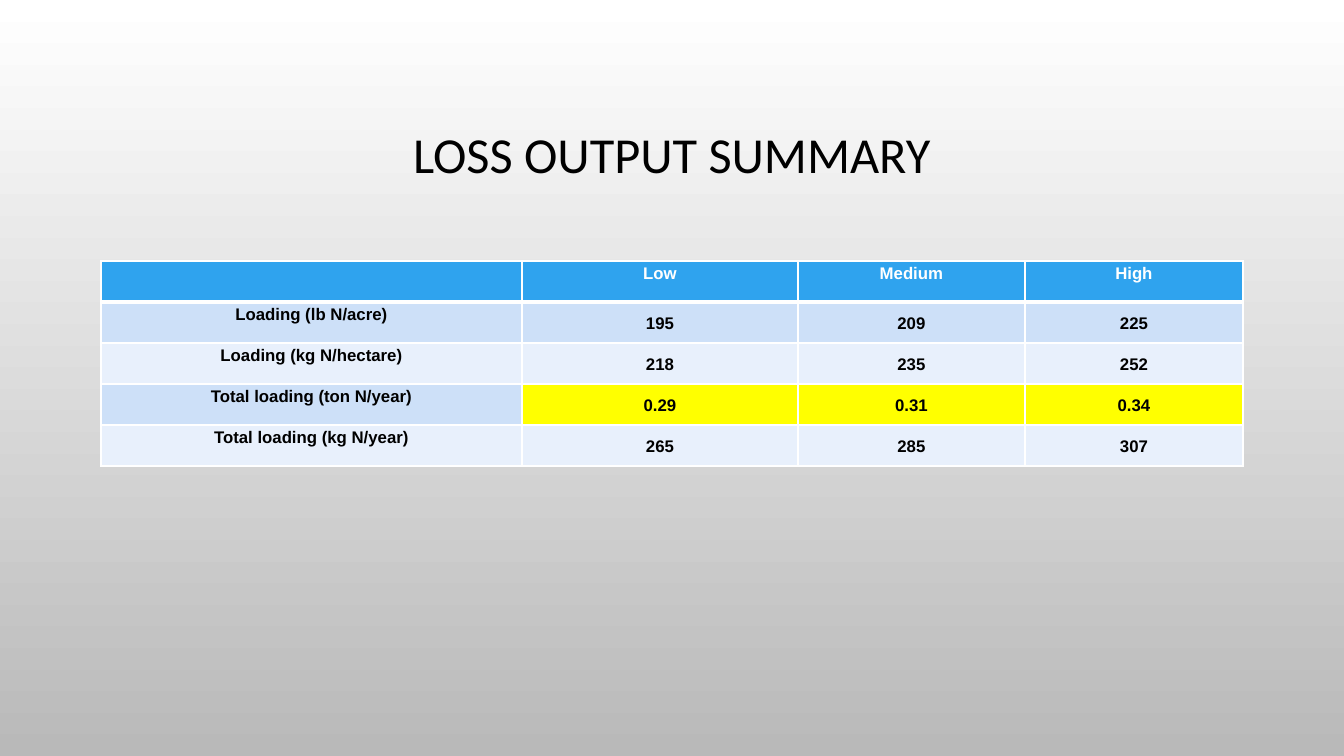
"""Build the loss output summary slide with its nitrogen loading table."""
from lxml import etree
from pptx import Presentation, util as u
from pptx.dml.color import RGBColor
from pptx.enum import text
from pptx.oxml import ns

PX = 914400 / 100.8
WHITE, BLACK, HEADER_BLUE, YELLOW = "FFFFFF", "000000", "2FA3EE", "FFFF00"
BANDS = ["E8F0FC", "CDE0F8"]


def px(length):
    return u.Emu(round(length * PX))


def style(paragraph, color, line_spacing, formats):
    paragraph.alignment = text.PP_ALIGN.CENTER
    paragraph.line_spacing = line_spacing
    for name, value in formats.items():
        setattr(paragraph.font, name, value)
    paragraph.font.color.rgb = RGBColor.from_string(color)


presentation = Presentation()
presentation.slide_width, presentation.slide_height = px(1344), px(756)
slide = presentation.slides.add_slide(presentation.slide_layouts[6])

background = slide.background.fill
background.gradient()
background.gradient_angle = 270
for stop, color in zip(background.gradient_stops, [WHITE, "B9B9B9"]):
    stop.color.rgb = RGBColor.from_string(color)

title = slide.shapes.add_textbox(px(101), px(69), px(1142), px(176))
title.text_frame.word_wrap = True
title.text_frame.vertical_anchor = text.MSO_ANCHOR.MIDDLE
title_paragraph = title.text_frame.paragraphs[0]
title_paragraph.text = "LOSS OUTPUT SUMMARY"
style(title_paragraph, BLACK, 0.9, {"name": "Calibri", "size": u.Pt(36)})

rows = [
    ["", "Low", "Medium", "High"],
    ["Loading (lb N/acre)", "195", "209", "225"],
    ["Loading (kg N/hectare)", "218", "235", "252"],
    ["Total loading (ton N/year)", "0.29", "0.31", "0.34"],
    ["Total loading (kg N/year)", "265", "285", "307"],
]
highlighted_row = 3
column_widths = [421, 276, 227, 218]
row_height = 41
cell_font = {"name": "Arial", "size": u.Pt(12), "bold": True}
cell_margins = {"margin_left": px(9), "margin_right": px(9), "margin_top": 0, "margin_bottom": 0}

table = slide.shapes.add_table(
    len(rows), len(column_widths), px(101), px(261),
    px(sum(column_widths)), px(row_height * len(rows))).table
for column, width in zip(table.columns, column_widths):
    column.width = px(width)

for row_index, values in enumerate(rows):
    table.rows[row_index].height = px(row_height)
    is_header = row_index == 0
    for column_index, value in enumerate(values):
        cell = table.cell(row_index, column_index)
        for name, margin in cell_margins.items():
            setattr(cell, name, margin)
        is_number = column_index > 0 and not is_header
        cell.vertical_anchor = text.MSO_ANCHOR.MIDDLE if is_number else text.MSO_ANCHOR.TOP
        paragraph = cell.text_frame.paragraphs[0]
        paragraph.text = value
        style(paragraph, WHITE if is_header else BLACK, 1.15, cell_font)

        border_widths = {
            "a:lnL": 1,
            "a:lnR": 1,
            "a:lnT": 3 if row_index == 1 else 1,
            "a:lnB": 3 if is_header else 1,
        }
        properties = cell._tc.get_or_add_tcPr()
        for tag, points in border_widths.items():
            border = etree.SubElement(properties, ns.qn(tag), w=str(u.Pt(points)))
            border_fill = etree.SubElement(border, ns.qn("a:solidFill"))
            etree.SubElement(border_fill, ns.qn("a:srgbClr"), val=WHITE)

        if is_header:
            fill_color = HEADER_BLUE
        elif is_number and row_index == highlighted_row:
            fill_color = YELLOW
        else:
            fill_color = BANDS[row_index % 2]
        cell.fill.solid()
        cell.fill.fore_color.rgb = RGBColor.from_string(fill_color)

presentation.save("out.pptx")
